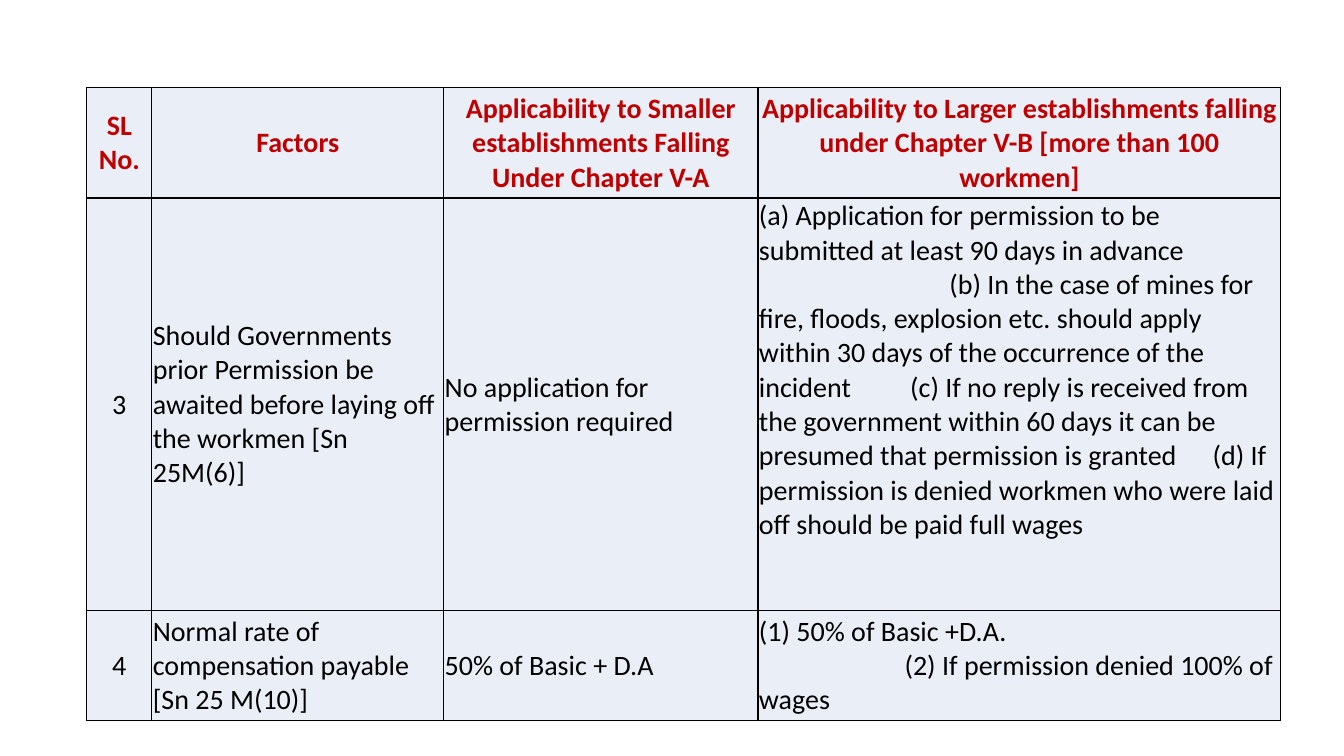
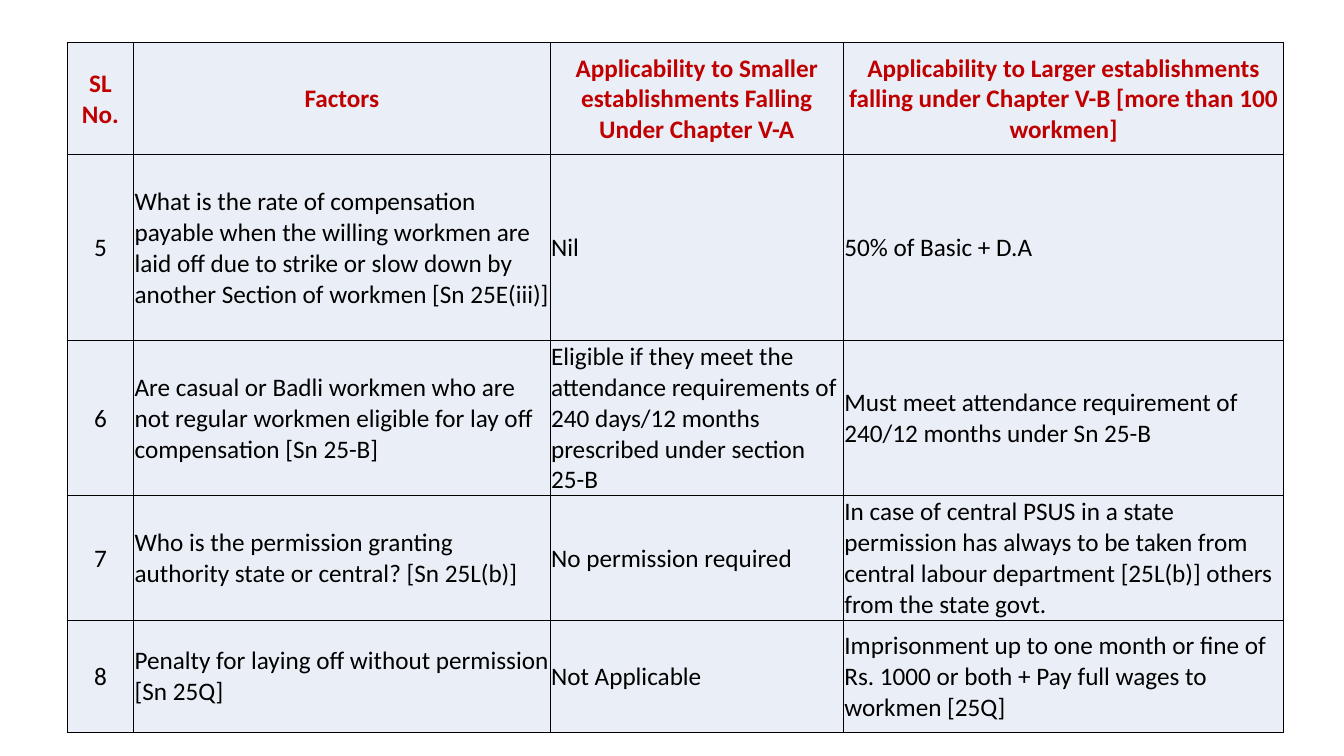
from lxml.etree import SubElement
from pptx import Presentation
from pptx.dml.color import RGBColor
from pptx.enum.text import MSO_ANCHOR, PP_ALIGN
from pptx.oxml.ns import qn
from pptx.util import Pt

FONT = "Calibri"
RED, BLACK, PALE = "C00000", "000000", "EAEFF7"
HEAD = [
    "SL No.",
    "Factors",
    "Applicability to Smaller establishments Falling Under Chapter V-A",
    "Applicability to Larger establishments falling under Chapter V-B [more than 100 workmen]",
]
PERMIT = (
    "(a) Application for permission to be submitted at least 90 days in advance\n"
    "(b) In the case of mines for fire, floods, explosion etc. should apply within 30 days "
    "of the occurrence of the incident\t\t(c) If no reply is received from the government "
    "within 60 days it can be presumed that permission is granted\t(d) If permission is "
    "denied workmen who were laid off should be paid full wages"
)
RATES = "(1) 50% of Basic +D.A.\n(2) If permission denied 100% of wages"

PERMIT_ROWS = [
    ["3",
     "Should Governments prior Permission be awaited before laying off the workmen [Sn 25M(6)]",
     "No application for permission required",
     (PERMIT, {"first": 136, "tabs": (238, 283), "anchor": MSO_ANCHOR.TOP})],
    ["4",
     "Normal rate of compensation payable [Sn 25 M(10)]",
     "50% of Basic + D.A",
     (RATES, {"first": 104})],
]
CLAIM_ROWS = [
    ["5",
     "What is the rate of compensation payable when the willing workmen are laid off due to "
     "strike or slow down by another Section of workmen [Sn 25E(iii)]",
     "Nil",
     "50% of Basic + D.A"],
    ["6",
     "Are casual or Badli workmen who are not regular workmen eligible for lay off "
     "compensation [Sn 25-B]",
     "Eligible if they meet the attendance requirements of 240 days/12 months prescribed "
     "under section 25-B",
     "Must meet attendance requirement of 240/12 months under Sn 25-B"],
    ["7",
     "Who is the permission granting authority state or central? [Sn 25L(b)]",
     "No permission required",
     "In case of central PSUS in a state permission has always to be taken from central "
     "labour department [25L(b)] others from the state govt."],
    ["8",
     "Penalty for laying off without permission [Sn 25Q]",
     "Not Applicable",
     "Imprisonment up to one month or fine of Rs. 1000 or both + Pay full wages to "
     "workmen [25Q]"],
]


def paint(code):
    """Return the colour for a hex string."""
    return RGBColor.from_string(code)


def write(cell, text, size=18, color=BLACK, bold=False, align=PP_ALIGN.LEFT,
          anchor=MSO_ANCHOR.MIDDLE, first=0, tabs=()):
    """Fill a cell with text, one paragraph a line, indenting the later ones."""
    cell.vertical_anchor = anchor
    frame = cell.text_frame
    for index, line in enumerate(text.split("\n")):
        para = frame.add_paragraph() if index else frame.paragraphs[0]
        para.alignment = align
        props = para._p.get_or_add_pPr()
        if index and first:
            props.set("marL", "0")
            props.set("indent", str(Pt(first)))
        if tabs:
            stops = SubElement(props, qn("a:tabLst"))
            for stop in tabs:
                SubElement(stops, qn("a:tab"), pos=str(Pt(stop)), algn="l")
        run = para.add_run()
        run.text = line
        font = run.font
        font.name, font.size, font.bold = FONT, Pt(size), bold
        font.color.rgb = paint(color)


def frame_cell(cell):
    """Give a cell its margins, thin borders and pale fill."""
    cell.margin_left = cell.margin_right = cell.margin_top = Pt(0.7)
    cell.margin_bottom = 0
    props = cell._tc.get_or_add_tcPr()
    for side in ("lnL", "lnR", "lnT", "lnB"):
        line = SubElement(props, qn("a:" + side), w=str(Pt(1)))
        fill = SubElement(line, qn("a:solidFill"))
        SubElement(fill, qn("a:srgbClr"), val=str(paint(BLACK)))
    cell.fill.solid()
    cell.fill.fore_color.rgb = paint(PALE)


def add_grid(deck, left, top, widths, heights, rows, size):
    """Add a slide with one factor table at the given corner."""
    slide = deck.slides.add_slide(deck.slide_layouts[6])
    table = slide.shapes.add_table(
        len(heights), len(widths), Pt(left), Pt(top), Pt(sum(widths)), Pt(sum(heights))
    ).table
    table.first_row = table.horz_banding = False
    for column, width in zip(table.columns, widths):
        column.width = Pt(width)
    for row, height in zip(table.rows, heights):
        row.height = Pt(height)
    for y, row in enumerate([HEAD] + rows):
        for x, item in enumerate(row):
            text, extra = (item, {}) if isinstance(item, str) else item
            cell = table.cell(y, x)
            frame_cell(cell)
            mid = y == 0 or x == 0
            write(cell, text, size=size, bold=y == 0, color=BLACK if y else RED,
                  align=PP_ALIGN.CENTER if mid else PP_ALIGN.LEFT, **extra)


def main():
    """Build both table slides and save the deck."""
    deck = Presentation()
    deck.slide_width, deck.slide_height = Pt(960), Pt(540)
    add_grid(deck, 62, 62.5, (46.5, 208.5, 224.5, 373.5), (79, 294.5, 78.5),
             PERMIT_ROWS, 20)
    add_grid(deck, 48, 30.5, (47.5, 297.5, 209.5, 314.5), (80, 133, 110.5, 89, 80),
             CLAIM_ROWS, 18)
    deck.save("out.pptx")


if __name__ == "__main__":
    main()
